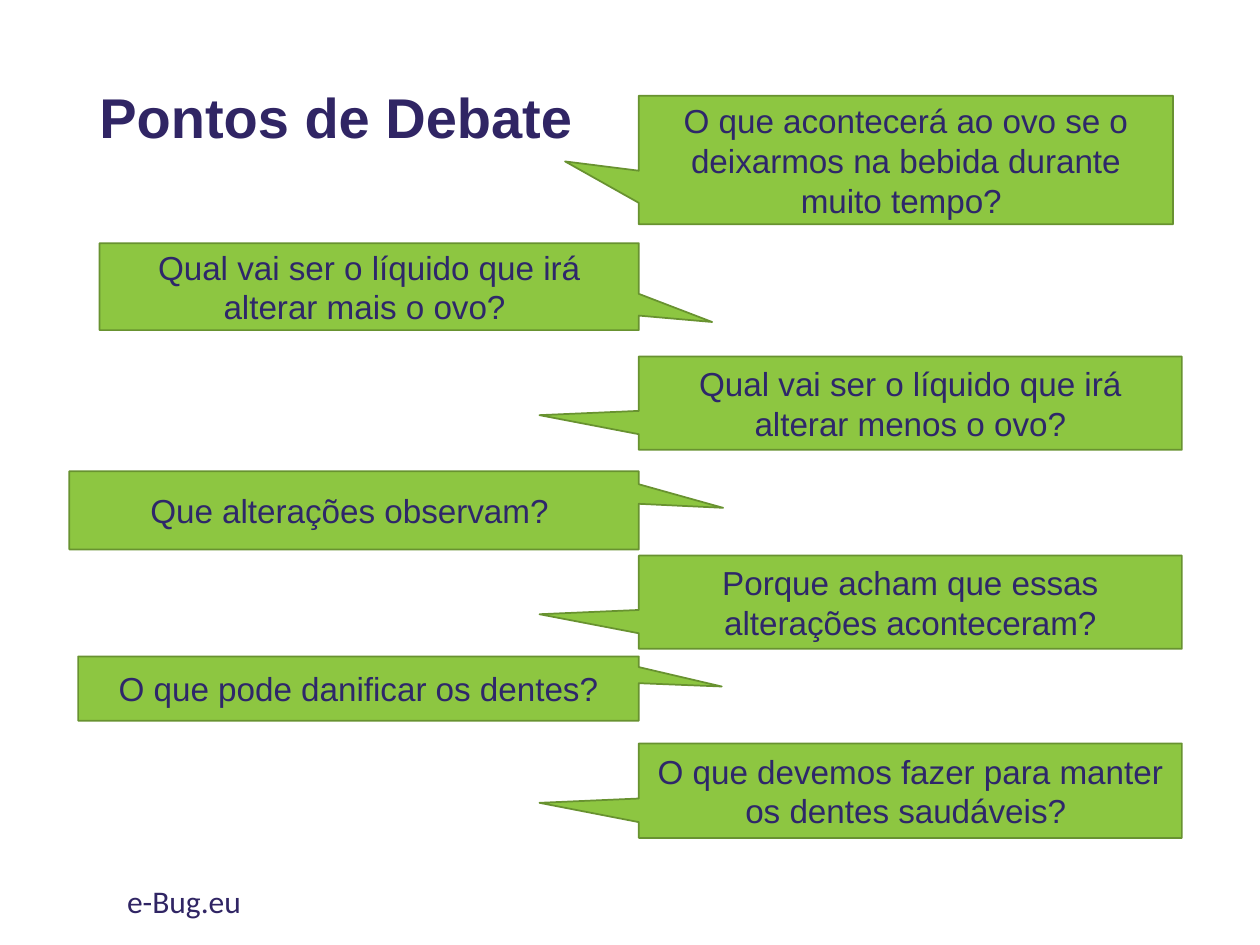
from pptx import Presentation
from pptx.dml.color import RGBColor
from pptx.enum.shapes import MSO_SHAPE
from pptx.enum.text import MSO_ANCHOR, PP_ALIGN
from pptx.util import Inches, Pt

CALLOUT = MSO_SHAPE.RECTANGULAR_CALLOUT
MIDDLE, TOP = MSO_ANCHOR.MIDDLE, MSO_ANCHOR.TOP
CENTER, LEFT = PP_ALIGN.CENTER, PP_ALIGN.LEFT

THEME = {
    "heading": {"font": "Arial", "size": 32, "color": "302564", "bold": True},
    "footer": {"font": "Calibri", "size": 18, "color": "302564", "bold": False},
    "question": {"font": "Arial", "size": 19, "color": "2E276A", "bold": False},
    "fill": "8DC641",
    "line": "689230",
}

TITLE = "Pontos de Debate"
FOOTER = "e-Bug.eu"
AXIS = 5.07

# side, top, width, height, pointer, text
QUESTIONS = [
    ("right", 0.76, 4.24, 1.02, (-0.638, 0.011),
     "O que acontecerá ao ovo se o deixarmos na bebida durante muito tempo? "),
    ("left", 1.93, 4.28, 0.69, (0.636, 0.407),
     "Qual vai ser o líquido que irá alterar mais o ovo? "),
    ("right", 2.83, 4.31, 0.74, (-0.683, 0.129),
     "Qual vai ser o líquido que irá alterar menos o ovo?"),
    ("left", 3.74, 4.52, 0.62, (0.648, -0.032),
     "Que alterações observam? "),
    ("right", 4.41, 4.31, 0.74, (-0.683, 0.129),
     "Porque acham que essas alterações aconteceram?"),
    ("left", 5.21, 4.45, 0.51, (0.648, -0.032),
     "O que pode danificar os dentes?"),
    ("right", 5.9, 4.31, 0.75, (-0.683, 0.129),
     "O que devemos fazer para manter os dentes saudáveis? "),
]


def set_text(sp, text, style, anchor, align):
    tf = sp.text_frame
    tf.word_wrap = True
    tf.vertical_anchor = anchor
    tf.text = text
    p = tf.paragraphs[0]
    p.alignment = align
    font = p.runs[0].font
    font.name = style["font"]
    font.size = Pt(style["size"])
    font.bold = style["bold"]
    font.color.rgb = RGBColor.from_string(style["color"])
    return p


def add_text(s, box, text, style, anchor):
    sp = s.shapes.add_textbox(*map(Inches, box))
    return set_text(sp, text, style, anchor, LEFT)


def add_question(s, side, top, width, height, pointer, text):
    left = AXIS if side == "right" else AXIS - width
    sp = s.shapes.add_shape(CALLOUT, *map(Inches, (left, top, width, height)))
    sp.shadow.inherit = False
    for i, value in enumerate(pointer):
        sp.adjustments[i] = value
    sp.fill.solid()
    sp.fill.fore_color.rgb = RGBColor.from_string(THEME["fill"])
    sp.line.color.rgb = RGBColor.from_string(THEME["line"])
    sp.line.width = Pt(1)
    set_text(sp, text, THEME["question"], MIDDLE, CENTER)


def main():
    prs = Presentation()
    prs.slide_width, prs.slide_height = Inches(10), Inches(7.5)
    s = prs.slides.add_slide(prs.slide_layouts[6])
    p = add_text(s, (0.69, 0.23, 8.62, 1.45), TITLE, THEME["heading"], MIDDLE)
    p.line_spacing = 0.9
    add_text(s, (0.91, 6.95, 3.38, 0.4), FOOTER, THEME["footer"], TOP)
    for question in QUESTIONS:
        add_question(s, *question)
    prs.save("out.pptx")


if __name__ == "__main__":
    main()
